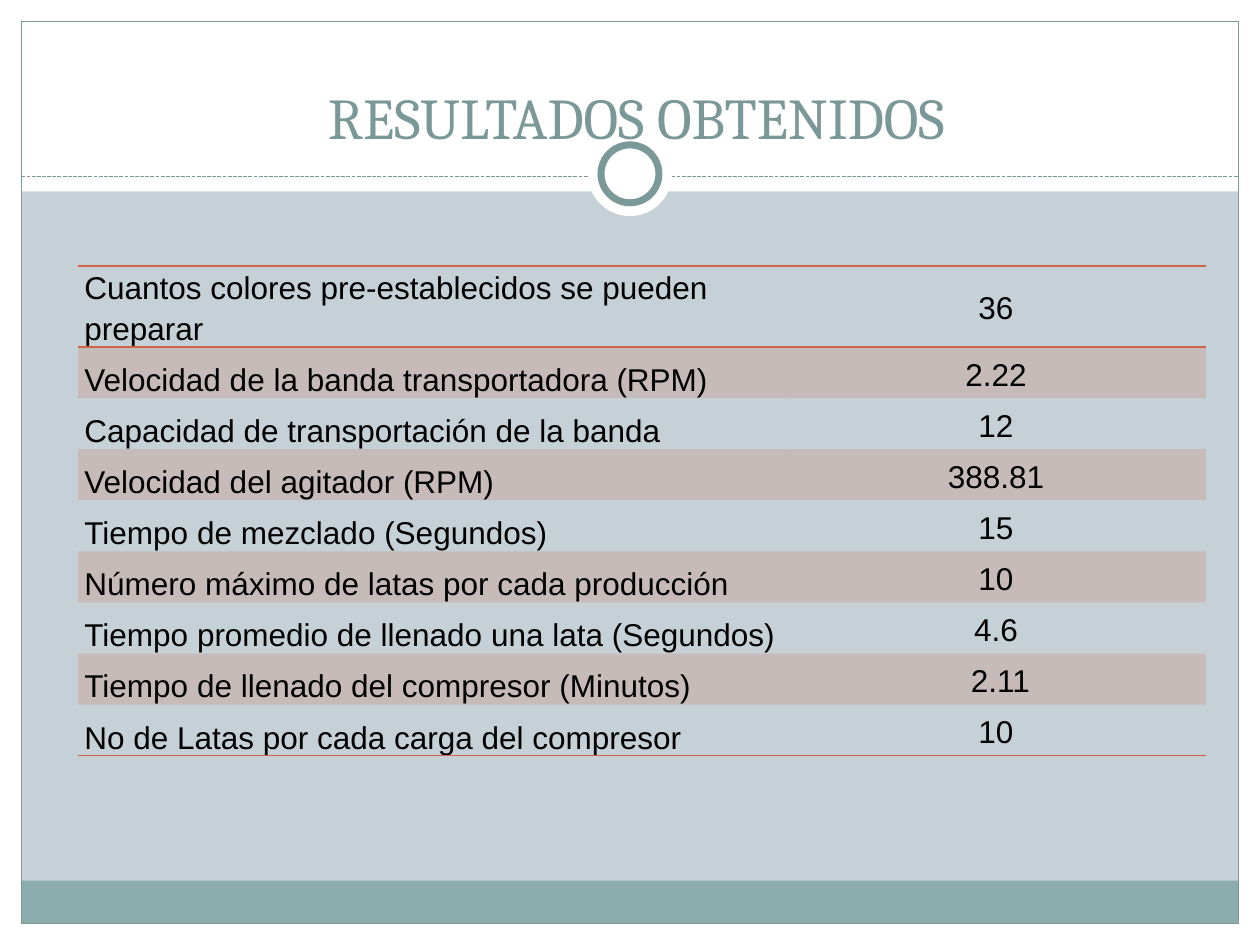
from lxml.etree import SubElement
from pptx import Presentation
from pptx.dml.color import RGBColor
from pptx.enum.dml import MSO_LINE
from pptx.enum.shapes import MSO_CONNECTOR, MSO_SHAPE
from pptx.enum.text import MSO_ANCHOR, PP_ALIGN
from pptx.oxml.ns import qn
from pptx.util import Inches, Pt

TITLE = "RESULTADOS OBTENIDOS"
RESULTS = [
    ("Cuantos colores pre-establecidos se pueden preparar", "36"),
    ("Velocidad de la banda transportadora (RPM)", "2.22"),
    ("Capacidad de transportación de la banda", "12"),
    ("Velocidad del agitador (RPM)", "388.81"),
    ("Tiempo de mezclado (Segundos)", "15"),
    ("Número máximo de latas por cada producción", "10"),
    ("Tiempo promedio de llenado una lata (Segundos)", "4.6"),
    ("Tiempo de llenado del compresor (Minutos)", " 2.11"),
    ("No de Latas por cada carga del compresor", "10"),
]
COLUMNS = [
    (5.62, PP_ALIGN.LEFT, MSO_ANCHOR.BOTTOM),
    (3.33, PP_ALIGN.CENTER, MSO_ANCHOR.MIDDLE),
]
WIDTH, HEIGHT = 10, 7.5
MARGIN = 0.17
HEADER, FOOTER = 1.52, 0.34
RULE_Y, RING_Y = 1.4, 1.38
INNER_W, INNER_H = WIDTH - 2 * MARGIN, HEIGHT - 2 * MARGIN
TABLE_X, TABLE_Y, TABLE_H = 0.62, 2.11, 3.65
WHITE, FRAME, BAND, ACCENT = "FFFFFF", "7C999A", "8CADAE", "D16349"


def color(value):
    return RGBColor.from_string(value)


def add_panel(slide, kind, box, fill=None, line=None, weight=0.75):
    panel = slide.shapes.add_shape(kind, *map(Inches, box))
    panel.shadow.inherit = False
    if fill:
        panel.fill.solid()
        panel.fill.fore_color.rgb = color(fill)
    else:
        panel.fill.background()
    if line:
        panel.line.color.rgb = color(line)
        panel.line.width = Pt(weight)
    else:
        panel.line.fill.background()


def add_circle(slide, size, **style):
    box = ((WIDTH - size) / 2, RING_Y - size / 2, size, size)
    add_panel(slide, MSO_SHAPE.OVAL, box, WHITE, **style)


def add_frame(slide):
    for box in [
        (0, HEIGHT - MARGIN, WIDTH, MARGIN),
        (0, 0, WIDTH, HEADER),
        (0, 0, MARGIN, HEIGHT),
        (WIDTH - MARGIN, 0, MARGIN, HEIGHT),
    ]:
        add_panel(slide, MSO_SHAPE.RECTANGLE, box, WHITE)
    footer = (MARGIN, HEIGHT - MARGIN - FOOTER, INNER_W, FOOTER)
    add_panel(slide, MSO_SHAPE.RECTANGLE, footer, BAND)
    add_panel(slide, MSO_SHAPE.RECTANGLE, (MARGIN, MARGIN, INNER_W, INNER_H), line=FRAME)
    ends = (MARGIN, RULE_Y, WIDTH - MARGIN, RULE_Y)
    rule = slide.shapes.add_connector(MSO_CONNECTOR.STRAIGHT, *map(Inches, ends))
    rule.line.color.rgb = color(FRAME)
    rule.line.width = Pt(0.75)
    rule.line.dash_style = MSO_LINE.SQUARE_DOT
    SubElement(rule._element.spPr, qn("a:effectLst"))
    add_circle(slide, 0.67)
    add_circle(slide, 0.46, line=FRAME, weight=4)


def write(paragraph, text, font, size, ink, align):
    paragraph.alignment = align
    run = paragraph.add_run()
    run.text = text
    run.font.name = font
    run.font.size = Pt(size)
    run.font.bold = False
    run.font.color.rgb = color(ink)


def add_title(slide):
    title = slide.shapes.title
    slide.shapes._spTree.append(title._element)
    title.left, title.top, title.width, title.height = map(Inches, (0.55, 0, 9, 1.25))
    title.text_frame.vertical_anchor = MSO_ANCHOR.BOTTOM
    write(title.text_frame.paragraphs[0], TITLE, "Cambria", 33, "7B9899", PP_ALIGN.CENTER)


def add_border(cell, side):
    border = SubElement(cell._tc.get_or_add_tcPr(), qn(f"a:{side}"), w=str(Pt(1)))
    fill = SubElement(border, qn("a:solidFill"))
    SubElement(fill, qn("a:srgbClr"), val=ACCENT)


def shade(cell, banded):
    if banded:
        cell.fill.solid()
        cell.fill.fore_color.rgb = color(ACCENT)
        tint = cell._tc.tcPr.find(qn("a:solidFill")).find(qn("a:srgbClr"))
        SubElement(tint, qn("a:alpha"), val="20000")
    else:
        cell.fill.background()


def add_results(slide):
    table_w = sum(width for width, _, _ in COLUMNS)
    box = map(Inches, (TABLE_X, TABLE_Y, table_w, TABLE_H))
    table = slide.shapes.add_table(len(RESULTS), len(COLUMNS), *box).table
    style = table._tbl.tblPr.find(qn("a:tableStyleId"))
    style.text = "{2D5ABB26-0587-4C30-8999-92F81FD0307C}"
    for column, (width, _, _) in zip(table.columns, COLUMNS):
        column.width = Inches(width)
    borders = {0: ("lnT", "lnB"), len(RESULTS) - 1: ("lnB",)}
    for r, result in enumerate(RESULTS):
        for c, (text, (_, align, anchor)) in enumerate(zip(result, COLUMNS)):
            cell = table.cell(r, c)
            cell.vertical_anchor = anchor
            cell.margin_left = cell.margin_right = Inches(0.05)
            cell.margin_top = cell.margin_bottom = 0
            for side in borders.get(r, ()):
                add_border(cell, side)
            shade(cell, r % 2 == 1)
            paragraph = cell.text_frame.paragraphs[0]
            paragraph.line_spacing = 1.15
            write(paragraph, text, "Arial", 18, "000000", align)


def main():
    deck = Presentation()
    deck.slide_width, deck.slide_height = Inches(WIDTH), Inches(HEIGHT)
    slide = deck.slides.add_slide(deck.slide_layouts[5])
    slide.background.fill.solid()
    slide.background.fill.fore_color.rgb = color("C5D1D7")
    add_frame(slide)
    add_title(slide)
    add_results(slide)
    deck.save("out.pptx")


if __name__ == "__main__":
    main()
